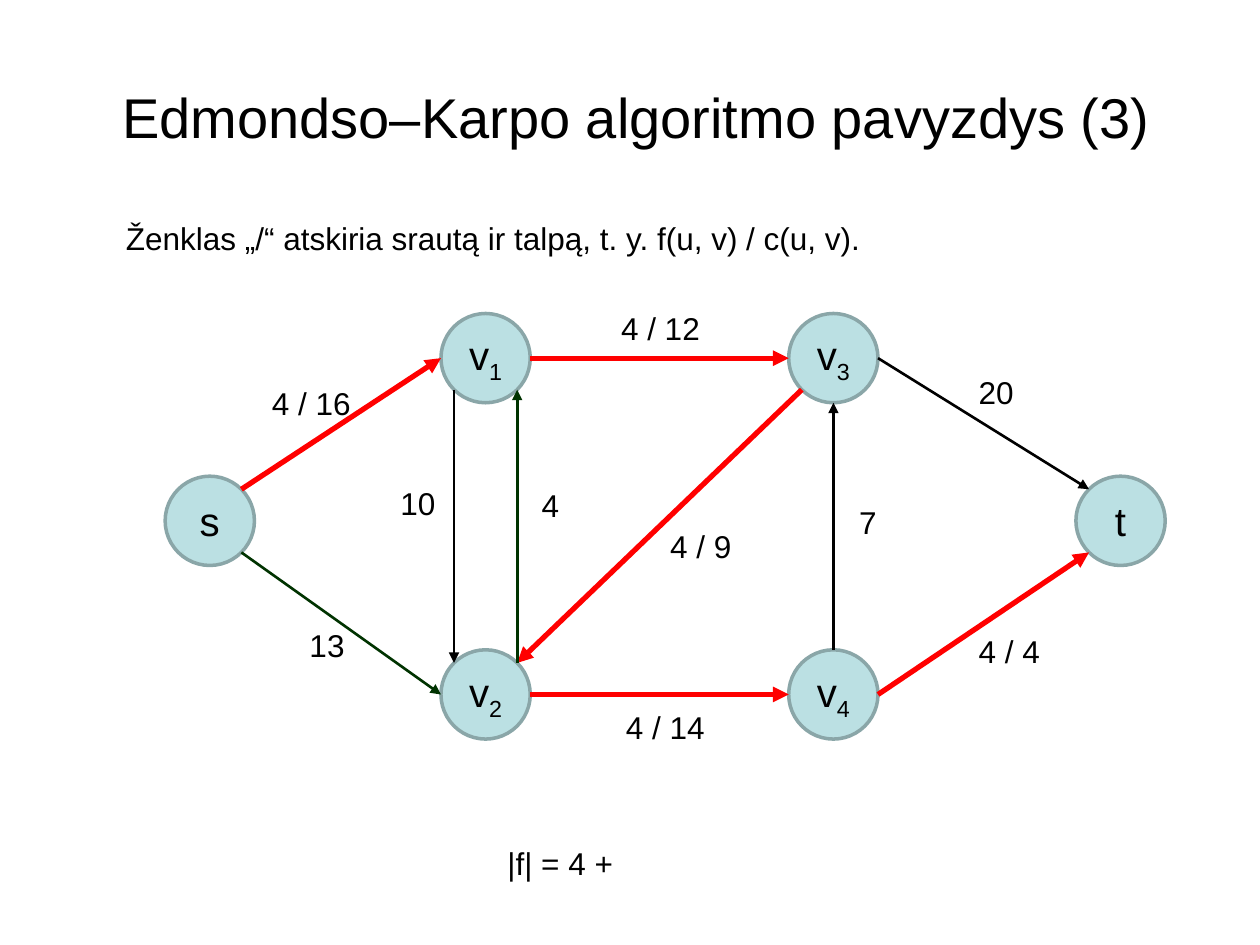
from math import cos, radians, sin

from lxml import etree
from pptx import Presentation, util as u
from pptx.dml.color import RGBColor
from pptx.enum import shapes, text
from pptx.oxml.ns import qn

COLORS = {"ink": "000000", "node": "BBE0E3", "rim": "8AA6A8",
          "path": "FF0000", "free": "003300"}
SIDES = {"right": 0, "low right": 45, "low": 90, "low left": 135,
         "left": 180, "top left": 225, "top": 270, "top right": 315}


class Graph:
    font = "Arial"
    radius = 0.9

    def __init__(self, slide):
        self.slide = slide
        self.nodes = {}

    def color(self, name):
        return RGBColor.from_string(COLORS[name])

    def run(self, para, words, size, base=0):
        run = para.add_run()
        run.text = words
        run.font.name = self.font
        run.font.size = u.Pt(size)
        run.font.color.rgb = self.color("ink")
        if base:
            run.font._element.set("baseline", str(base * 1000))

    def title(self, words, left, top, width, height):
        box = self.slide.shapes.title
        box.left, box.top = u.Cm(left), u.Cm(top)
        box.width, box.height = u.Cm(width), u.Cm(height)
        frame = box.text_frame
        frame.vertical_anchor = text.MSO_ANCHOR.MIDDLE
        para = frame.paragraphs[0]
        para.alignment = text.PP_ALIGN.CENTER
        self.run(para, words, 32)

    def label(self, words, left, top, width):
        box = self.slide.shapes.add_textbox(
            u.Cm(left), u.Cm(top), u.Cm(width), u.Cm(1.02))
        frame = box.text_frame
        frame.word_wrap = False
        frame.auto_size = text.MSO_AUTO_SIZE.SHAPE_TO_FIT_TEXT
        self.run(frame.paragraphs[0], words, 18)

    def node(self, name, x, y):
        self.nodes[name] = x, y
        size = u.Cm(2 * self.radius)
        disc = self.slide.shapes.add_shape(
            shapes.MSO_SHAPE.OVAL, u.Cm(x - self.radius),
            u.Cm(y - self.radius), size, size)
        disc.shadow.inherit = False
        disc.fill.solid()
        disc.fill.fore_color.rgb = self.color("node")
        disc.line.color.rgb = self.color("rim")
        disc.line.width = u.Pt(2)
        frame = disc.text_frame
        frame.word_wrap = False
        frame.margin_left = frame.margin_right = 0
        frame.vertical_anchor = text.MSO_ANCHOR.MIDDLE
        para = frame.paragraphs[0]
        para.alignment = text.PP_ALIGN.CENTER
        self.run(para, name[0], 23)
        if name[1:]:
            self.run(para, name[1:], 23, -25)

    def port(self, name, side):
        x, y = self.nodes[name]
        turn = radians(SIDES[side])
        return (u.Cm(x + self.radius * cos(turn)),
                u.Cm(y + self.radius * sin(turn)))

    def edge(self, start, out, end, into, color):
        line = self.slide.shapes.add_connector(
            shapes.MSO_CONNECTOR.STRAIGHT,
            *self.port(start, out), *self.port(end, into))
        line.line.color.rgb = self.color(color)
        line.line.width = u.Pt(3 if color == "path" else 1.5)
        props = line._element.spPr
        tip = etree.SubElement(props.find(qn("a:ln")), qn("a:tailEnd"))
        tip.set("type", "triangle")
        etree.SubElement(props, qn("a:effectLst"))


NODES = [
    ("v1", 9.79, 7.22), ("v3", 16.8, 7.22),
    ("v2", 9.79, 14), ("v4", 16.8, 14),
    ("s", 4.23, 10.5), ("t", 22.59, 10.5),
]
EDGES = [
    ("s", "top right", "v1", "left", "path"),
    ("v1", "right", "v3", "left", "path"),
    ("s", "low right", "v2", "left", "free"),
    ("v2", "right", "v4", "left", "path"),
    ("v3", "low left", "v2", "top right", "path"),
    ("v1", "low left", "v2", "top left", "ink"),
    ("v2", "top right", "v1", "low right", "free"),
    ("v4", "top", "v3", "low", "ink"),
    ("v3", "right", "t", "top left", "ink"),
    ("v4", "right", "t", "low left", "path"),
]
LABELS = [
    ("4 / 16", 5.23, 7.62, 2.11), ("4 / 12", 12.27, 6.1, 2.11),
    ("7", 17.07, 10.01, 0.86), ("13", 5.99, 12.5, 1.22),
    ("10", 7.82, 9.63, 1.22), ("4", 10.67, 9.68, 0.86),
    ("4 / 9", 13.26, 10.49, 1.75), ("4 / 14", 12.37, 14.15, 2.11),
    ("4 / 4", 19.48, 12.62, 1.75), ("20", 19.48, 7.39, 1.22),
    ("Ženklas „/“ atskiria srautą ir talpą, t. y. f(u, v) / c(u, v).",
     2.29, 4.29, 15.57),
    ("|f| = 4 +", 9.98, 16.89, 2.84),
]


def main():
    deck = Presentation()
    deck.slide_width, deck.slide_height = u.Cm(25.4), u.Cm(19.05)
    graph = Graph(deck.slides.add_slide(deck.slide_layouts[5]))
    graph.title("Edmondso–Karpo algoritmo pavyzdys (3)",
                1.4, 0.76, 22.86, 3.18)
    for node in NODES:
        graph.node(*node)
    for edge in EDGES:
        graph.edge(*edge)
    for label in LABELS:
        graph.label(*label)
    deck.save("out.pptx")


if __name__ == "__main__":
    main()
